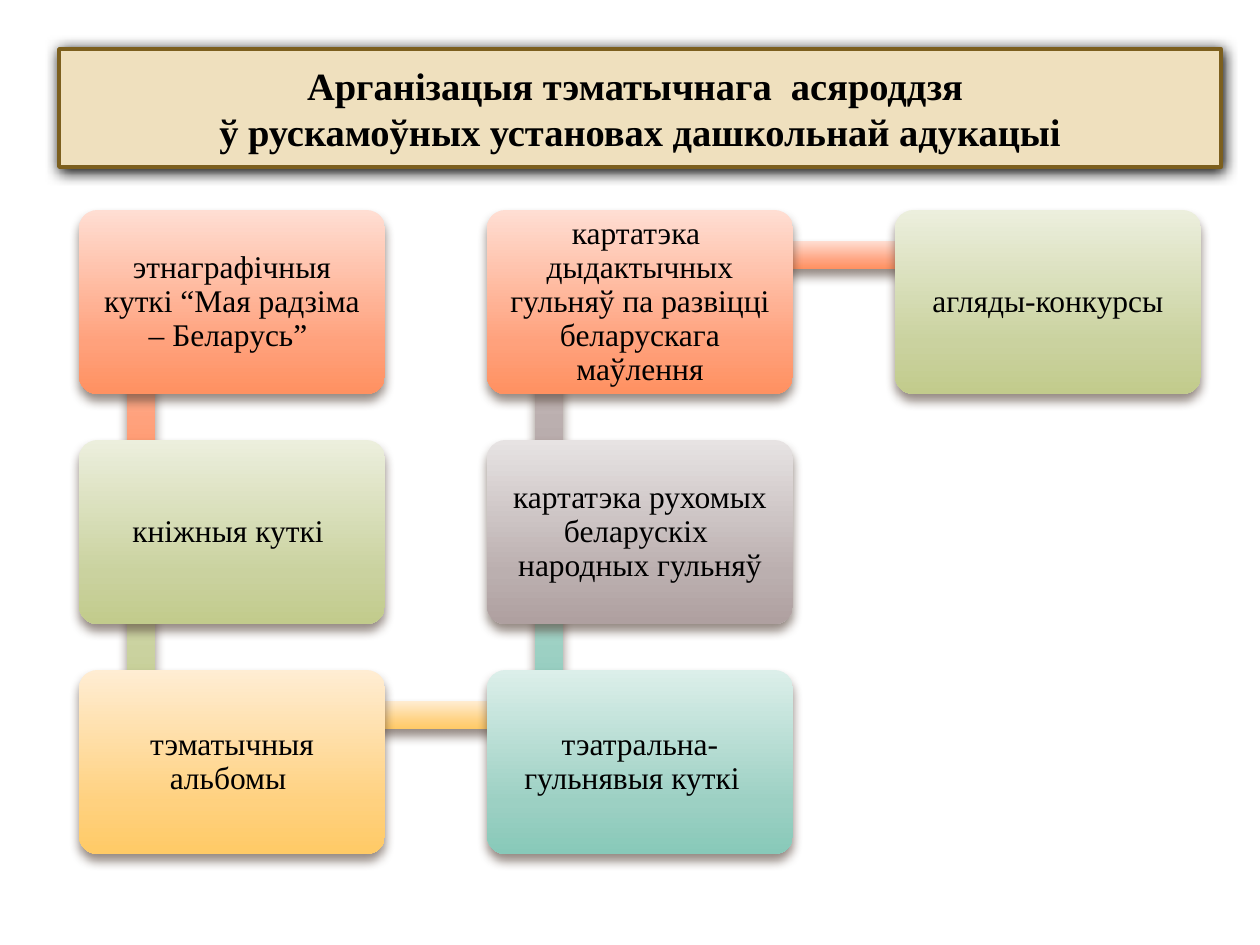
import pptx
import pptx.dml.color
import pptx.enum.shapes
import pptx.enum.text
import pptx.oxml
import pptx.oxml.ns
import pptx.util

RGBColor = pptx.dml.color.RGBColor
qn = pptx.oxml.ns.qn
PX = 914400 / 126
FONT = "Times New Roman"

BLACK = RGBColor(0x00, 0x00, 0x00)
TITLE_FILL = RGBColor(0xEF, 0xE0, 0xBE)
TITLE_LINE = RGBColor(0x7C, 0x5F, 0x1E)
SHADOW = RGBColor(0x4E, 0x3B, 0x30)

# Gradient colours at each of STOPS, top to bottom
STOPS = (0, 72, 100)
CORAL = (RGBColor(0xFF, 0xDE, 0xD3), RGBColor(0xFF, 0xA1, 0x7C), RGBColor(0xFF, 0x91, 0x61))
OLIVE = (RGBColor(0xEC, 0xEF, 0xDD), RGBColor(0xCA, 0xD2, 0x9F), RGBColor(0xC2, 0xCB, 0x8C))
AMBER = (RGBColor(0xFF, 0xED, 0xD3), RGBColor(0xFF, 0xD1, 0x7F), RGBColor(0xFF, 0xCA, 0x66))
TEAL = (RGBColor(0xDC, 0xEF, 0xEA), RGBColor(0x9C, 0xD0, 0xC3), RGBColor(0x88, 0xC9, 0xB9))
GREY = (RGBColor(0xE7, 0xE3, 0xE3), RGBColor(0xBB, 0xAF, 0xAF), RGBColor(0xAF, 0xA0, 0xA0))

GRID_LEFT, GRID_TOP = 79, 210
COLUMN_PITCH, ROW_PITCH = 408, 230
BOX_WIDTH, BOX_HEIGHT = 306, 184
ANCHOR_X, ANCHOR_Y = 62, 45
BAR_THICKNESS = 28

# Column, row, colours and text, in the order of the winding path
STEPS = [
    (0, 0, CORAL, "этнаграфiчныя куткi “Мая радзіма – Беларусь” "),
    (0, 1, OLIVE, "кнiжныя куткi "),
    (0, 2, AMBER, "тэматычныя альбомы "),
    (1, 2, TEAL, "тэатральна-гульнявыя куткi  "),
    (1, 1, GREY, "картатэка рухомых беларускiх  народных гульняў"),
    (1, 0, CORAL, "картатэка  дыдактычных гульняў па развіцці беларускага маўлення"),
    (2, 0, OLIVE, "агляды-конкурсы"),
]


def px(length):
    return pptx.util.Emu(round(length * PX))


def place(shape, left, top, width, height):
    shape.left, shape.top = px(left), px(top)
    shape.width, shape.height = px(width), px(height)


def xml(markup):
    namespace = pptx.oxml.ns.nsdecls("a")
    return pptx.oxml.parse_xml(markup.replace(">", f" {namespace}>", 1))


def set_shadow(shape, color, alpha, blur, distance):
    """Give the shape a downward shadow; blur and distance are in points."""
    shape.shadow.inherit = False
    shape.element.spPr.find(qn("a:effectLst")).append(xml(
        f'<a:outerShdw blurRad="{pptx.util.Pt(blur)}" dist="{pptx.util.Pt(distance)}" '
        f'dir="5400000" algn="ctr" rotWithShape="0"><a:srgbClr val="{color}">'
        f'<a:alpha val="{alpha * 1000}"/></a:srgbClr></a:outerShdw>'))


def set_gradient(shape, colors):
    """Fill from top to bottom of the slide, whatever the shape's rotation."""
    shape.fill.gradient()
    shape.fill.gradient_angle = 270
    gradient = shape.element.spPr.find(qn("a:gradFill"))
    gradient.set("rotWithShape", "0")
    stop_list = gradient.find(qn("a:gsLst"))
    for stop in list(stop_list):
        stop_list.remove(stop)
    for position, color in zip(STOPS, colors):
        stop_list.append(xml(f'<a:gs pos="{position * 1000}"><a:srgbClr val="{color}"/></a:gs>'))


def set_font(paragraph, size, bold=False):
    paragraph.alignment = pptx.enum.text.PP_ALIGN.CENTER
    paragraph.font.name = FONT
    paragraph.font.size = pptx.util.Pt(size)
    paragraph.font.bold = bold
    paragraph.font.color.rgb = BLACK


def add_title(slide, lines):
    title = slide.shapes.title
    place(title, 59, 49, 1162, 118)
    title.element.spPr.append(xml('<a:prstGeom prst="roundRect"><a:avLst/></a:prstGeom>'))
    title.fill.solid()
    title.fill.fore_color.rgb = TITLE_FILL
    title.line.color.rgb = TITLE_LINE
    title.line.width = pptx.util.Pt(2)
    set_shadow(title, BLACK, 100, 8.5, 1)
    frame = title.text_frame
    frame.text = "\n".join(lines)
    frame.vertical_anchor = pptx.enum.text.MSO_ANCHOR.MIDDLE
    for paragraph in frame.paragraphs:
        set_font(paragraph, 22, bold=True)


def add_gradient_shape(slide, kind, left, top, width, height, colors):
    shape = slide.shapes.add_shape(kind, px(left), px(top), px(width), px(height))
    set_gradient(shape, colors)
    shape.line.fill.background()
    set_shadow(shape, SHADOW, 60, 6, 4)
    return shape


def box_corner(column, row):
    return GRID_LEFT + column * COLUMN_PITCH, GRID_TOP + row * ROW_PITCH


def add_bar(slide, start, end, colors):
    """Join the anchor points of two neighbouring boxes."""
    (start_x, start_y), (end_x, end_y) = box_corner(*start), box_corner(*end)
    length = abs(end_x - start_x) + abs(end_y - start_y) - 2
    center_x = (start_x + end_x) // 2 + ANCHOR_X
    center_y = (start_y + end_y) // 2 + ANCHOR_Y
    bar = add_gradient_shape(
        slide, pptx.enum.shapes.MSO_SHAPE.RECTANGLE, center_x - length // 2,
        center_y - BAR_THICKNESS // 2, length, BAR_THICKNESS, colors)
    if end_y != start_y:
        bar.rotation = 90 if end_y > start_y else 270


def add_box(slide, column, row, colors, text):
    left, top = box_corner(column, row)
    box = add_gradient_shape(slide, pptx.enum.shapes.MSO_SHAPE.ROUNDED_RECTANGLE,
                             left, top, BOX_WIDTH, BOX_HEIGHT, colors)
    box.adjustments[0] = 0.1
    frame = box.text_frame
    frame.word_wrap = True
    frame.vertical_anchor = pptx.enum.text.MSO_ANCHOR.MIDDLE
    frame.margin_left = frame.margin_right = px(14)
    frame.margin_top = frame.margin_bottom = px(5)
    frame.text = text
    paragraph = frame.paragraphs[0]
    paragraph.line_spacing = 0.9
    set_font(paragraph, 18)


def main():
    presentation = pptx.Presentation()
    presentation.slide_width, presentation.slide_height = px(1260), px(945)
    slide = presentation.slides.add_slide(presentation.slide_layouts[5])
    add_title(slide, ["Арганiзацыя тэматычнага  асяроддзя ",
                      "ў рускамоўных установах дашкольнай адукацыі"])
    for step, following in zip(STEPS, STEPS[1:] + [None]):
        if following:
            add_bar(slide, step[:2], following[:2], step[2])
        add_box(slide, *step)
    presentation.save("out.pptx")


if __name__ == "__main__":
    main()
